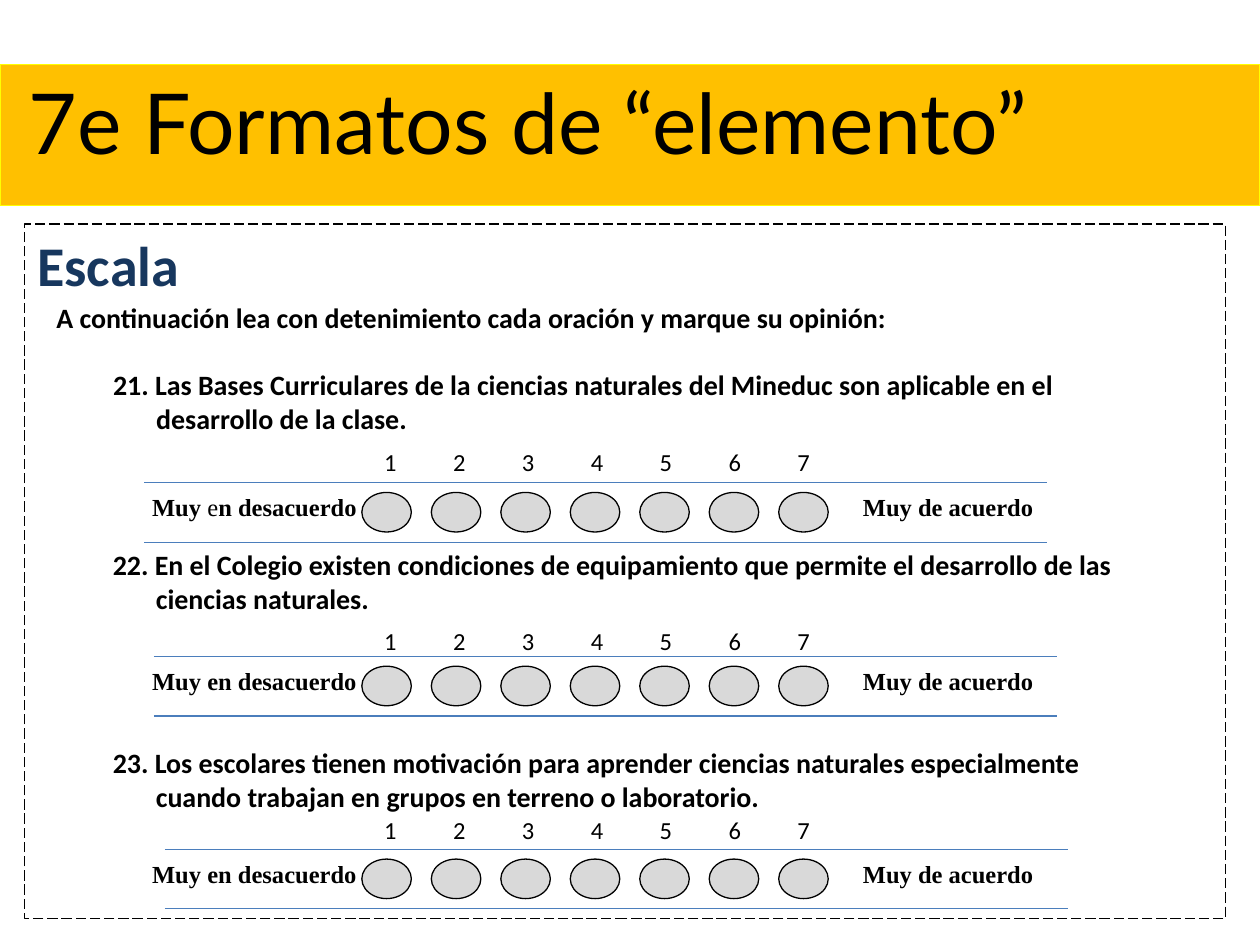
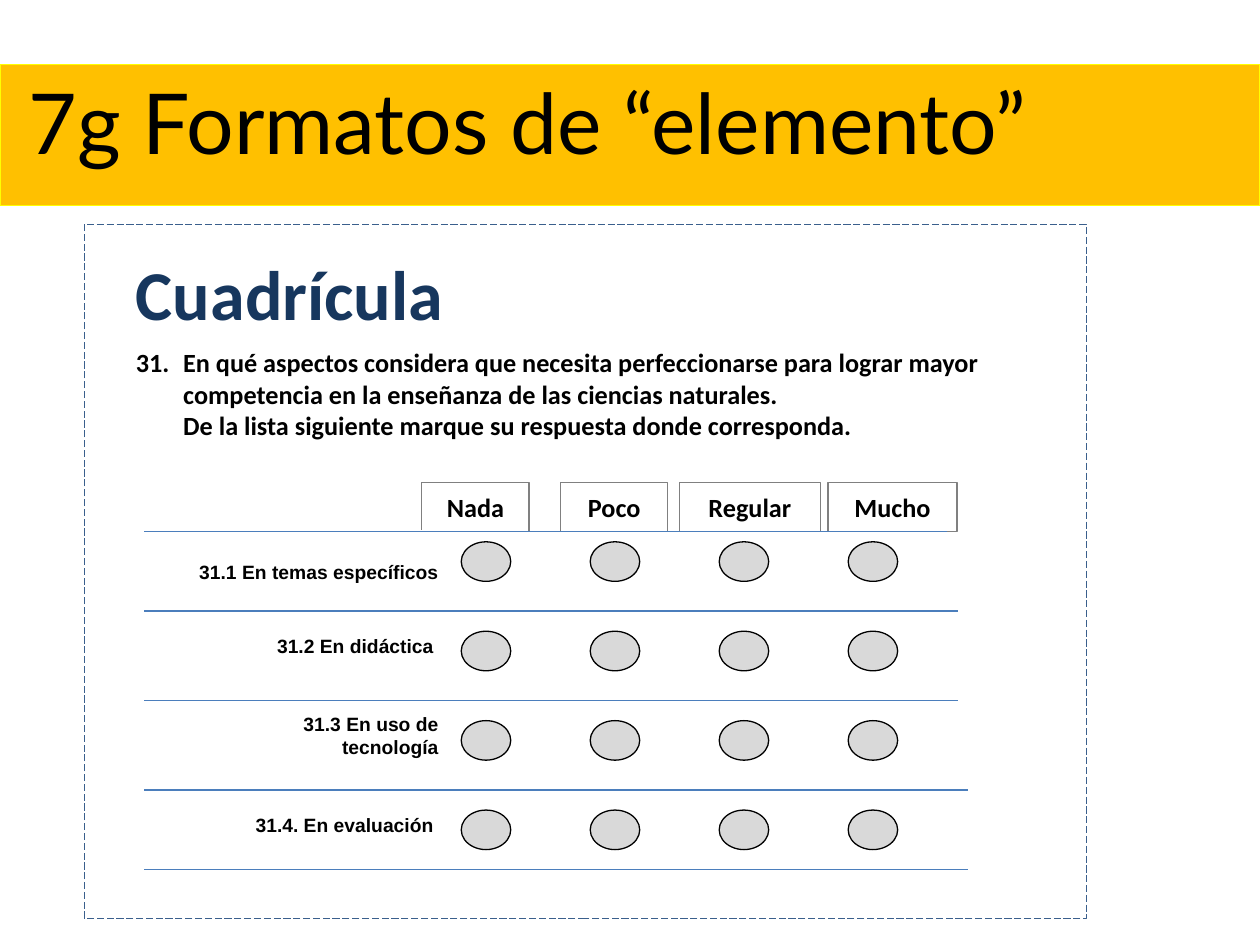
import pptx
import pptx.util
import pptx.dml.color
import pptx.enum.dml
import pptx.enum.shapes
import pptx.enum.text
import pptx.oxml.ns
import lxml.etree

Pt = pptx.util.Pt
SHAPE = pptx.enum.shapes.MSO_SHAPE
ALIGN = pptx.enum.text.PP_ALIGN
ANCHOR = pptx.enum.text.MSO_ANCHOR
qn = pptx.oxml.ns.qn

COLORS = {
    "black": "000000", "white": "FFFFFF", "band": "FFC000", "band_edge": "FFFF00",
    "heading": "17375E", "circle": "D9D9D9", "rule": "4B7EBC",
    "frame": "3A5F8C", "header_edge": "808080",
}
RGB = {name: pptx.dml.color.RGBColor.from_string(c) for name, c in COLORS.items()}


def add_box(s, rect, fill=None, line=None, width=0.75, kind=SHAPE.RECTANGLE, align=ALIGN.LEFT):
    sp = s.shapes.add_shape(kind, *[Pt(v) for v in rect])
    sp.shadow.inherit = False
    if fill:
        sp.fill.solid()
        sp.fill.fore_color.rgb = RGB[fill]
    else:
        sp.fill.background()
    if line:
        sp.line.color.rgb = RGB[line]
        sp.line.width = Pt(width)
    else:
        sp.line.fill.background()
    tf = sp.text_frame
    tf.word_wrap = True
    tf.vertical_anchor = ANCHOR.MIDDLE
    tf.paragraphs[0].alignment = align
    return sp


def add_run(p, text, size, font="Calibri", color="black", bold=True, margin=0, indent=0):
    r = p.add_run()
    r.text = text
    r.font.size = Pt(size)
    r.font.name = font
    r.font.bold = bold
    r.font.color.rgb = RGB[color]
    if margin:
        pPr = p._p.get_or_add_pPr()
        pPr.set("marL", str(Pt(margin)))
        pPr.set("indent", str(Pt(indent)))


prs = pptx.Presentation()
prs.slide_width, prs.slide_height = Pt(720), Pt(540)

# Slides with the shared title band
slides = []
for title in ["7e Formatos de “elemento”", "7g Formatos de “elemento”"]:
    s = prs.slides.add_slide(prs.slide_layouts[5])
    sp = s.shapes.title
    sp.left, sp.top, sp.width, sp.height = Pt(0), Pt(36.75), Pt(720), Pt(80.6)
    sp.fill.solid()
    sp.fill.fore_color.rgb = RGB["band"]
    sp.line.color.rgb = RGB["band_edge"]
    sp.line.width = Pt(0.75)
    tf = sp.text_frame
    tf.auto_size = pptx.enum.text.MSO_AUTO_SIZE.NONE
    tf.vertical_anchor = ANCHOR.TOP
    tf.margin_left = Pt(16.5)
    tf.paragraphs[0].alignment = ALIGN.LEFT
    add_run(tf.paragraphs[0], title, 48, "Lato", bold=False)
    slides.append(s)
scale, grid = slides
rules = []  # slide, left, right, y
CIRCLE_W, CIRCLE_H = 28.3, 22.6

# Scale: frame and heading
sp = add_box(scale, (14.2, 128, 686, 397), line="black")
sp.line.dash_style = pptx.enum.dml.MSO_LINE.LONG_DASH
sp.text_frame.vertical_anchor = ANCHOR.TOP
p = sp.text_frame.paragraphs[0]
p.space_before = Pt(2)
add_run(p, "Escala", 32, color="heading")

# Scale: instruction and first question
tf = add_box(scale, (25.2, 168, 629, 85)).text_frame
tf.vertical_anchor = ANCHOR.TOP
add_run(tf.paragraphs[0], "A continuación lea con detenimiento cada oración y marque su opinión:", 16)
p = tf.add_paragraph()
p.alignment = ALIGN.LEFT
p.space_before = Pt(19.5)
add_run(p, "21. Las Bases Curriculares de la ciencias naturales del Mineduc son aplicable en el "
        "desarrollo de la clase.", 16, margin=57, indent=-24.7)

# Scale: one answer row per question
# numbers top, label top, rule left, left label runs (text, bold)
plain = [("Muy en desacuerdo", True)]
rows = [
    (252.7, 275.8, 82.3, [("Muy", True), (" e", False), ("n desacuerdo", True)]),
    (355, 375.1, 88, plain),
    (463, 485.3, 94.2, plain),
]
for numbers_top, top, rule_left, left_label in rows:
    # Numbers on centred tab stops
    p = add_box(scale, (99.4, numbers_top, 481.7, 22.3), "white", "white", 2).text_frame.paragraphs[0]
    add_run(p, "".join(f"\t{n}" for n in range(1, 8)), 14, bold=False)
    tabs = lxml.etree.SubElement(p._p.get_or_add_pPr(), qn("a:tabLst"))
    for i in range(7):
        lxml.etree.SubElement(tabs, qn("a:tab"), pos=str(Pt(116.6 + 39.35 * i)), algn="ctr")

    # End labels
    tf = add_box(scale, (65.5, top, 147.6, 28), "white", "white", 2, align=ALIGN.RIGHT).text_frame
    tf.margin_right = Pt(9.2)
    for text, bold in left_label:
        add_run(tf.paragraphs[0], text, 14, "Times New Roman", bold=bold)
    tf = add_box(scale, (468, top, 147.6, 28), "white", "white", 2, align=ALIGN.CENTER).text_frame
    add_run(tf.paragraphs[0], "Muy de acuerdo", 14, "Times New Roman")

    # Circles
    for i in range(7):
        add_box(scale, (206.8 + 39.7 * i, top + 5.6, CIRCLE_W, CIRCLE_H), "circle", "black", kind=SHAPE.OVAL)
    for y in (top, top + 34):
        rules.append((scale, rule_left, rule_left + 516, y))

# Scale: remaining questions
questions = [
    (309.6, "22. En el Colegio existen condiciones de equipamiento que permite el desarrollo "
            "de las ciencias naturales."),
    (422.6, "23. Los escolares tienen motivación para aprender ciencias naturales especialmente "
            "cuando trabajan en grupos en terreno o laboratorio."),
]
for top, text in questions:
    tf = add_box(scale, (54, top, 601, 46)).text_frame
    tf.vertical_anchor = ANCHOR.TOP
    add_run(tf.paragraphs[0], text, 16, margin=28, indent=-24.6)

# Grid: frame and heading
sp = add_box(grid, (48.2, 128, 572.4, 397), "white", "frame", 0.5)
sp.line.dash_style = pptx.enum.dml.MSO_LINE.LONG_DASH
tf = add_box(grid, (70.6, 139.7, 294.5, 55.4)).text_frame
tf.vertical_anchor = ANCHOR.TOP
add_run(tf.paragraphs[0], "Cuadrícula", 40, color="heading")

# Grid: numbered question
tf = add_box(grid, (70.6, 202.3, 544.3, 45.4), "white", "white").text_frame
p = tf.paragraphs[0]
add_run(p, "En qué aspectos considera que necesita perfeccionarse para lograr mayor "
        "competencia en la enseñanza de las ciencias naturales.", 15, margin=27, indent=-27)
lxml.etree.SubElement(p._p.get_or_add_pPr(), qn("a:buFont"), typeface="+mj-lt")
lxml.etree.SubElement(p._p.get_or_add_pPr(), qn("a:buAutoNum"), type="arabicPeriod", startAt="31")
p = tf.add_paragraph()
p.alignment = ALIGN.LEFT
add_run(p, "De la lista siguiente marque su respuesta donde corresponda.", 15, margin=27)

# Grid: column headers
for left, width, text in [(241, 61.4, "Nada"), (320.3, 61.4, "Poco"),
                          (388.2, 80.6, "Regular"), (473.2, 73.7, "Mucho")]:
    tf = add_box(grid, (left, 275.8, width, 28), "white", "header_edge", align=ALIGN.CENTER).text_frame
    add_run(tf.paragraphs[0], text, 15)

# Grid: aspects, each with four circles
aspects = [
    ("31.1 En temas específicos", (87.8, 303.8, 170, 45.4), 7.2),
    ("31.2 En didáctica", (110.9, 355, 147.6, 28), 10.6),
    ("31.3 En uso de tecnología", (99.4, 406, 158.4, 28), 7.2),
    ("31.4. En evaluación", (110.9, 457.2, 147.6, 28), 10.6),
]
for row, (text, rect, right_inset) in enumerate(aspects):
    tf = add_box(grid, rect, "white", "white", 2, align=ALIGN.RIGHT).text_frame
    tf.margin_left, tf.margin_right = Pt(20), Pt(right_inset)
    add_run(tf.paragraphs[0], text, 11, "Arial")
    for col in range(4):
        add_box(grid, (263.6 + 73.7 * col, 309.6 + 51.1 * row, CIRCLE_W, CIRCLE_H),
                "circle", "black", kind=SHAPE.OVAL)
for right, y in [(541.4, 303.8), (547.2, 349.2), (547.2, 400.3), (553, 451.4), (553, 496.8)]:
    rules.append((grid, 82.3, right, y))

# Rules on both slides
for s, left, right, y in rules:
    line = s.shapes.add_connector(pptx.enum.shapes.MSO_CONNECTOR.STRAIGHT, Pt(left), Pt(y), Pt(right), Pt(y))
    line.line.color.rgb = RGB["rule"]
    line.line.width = Pt(0.75)
    lxml.etree.SubElement(line._element.spPr, qn("a:effectLst"))

prs.save("out.pptx")
